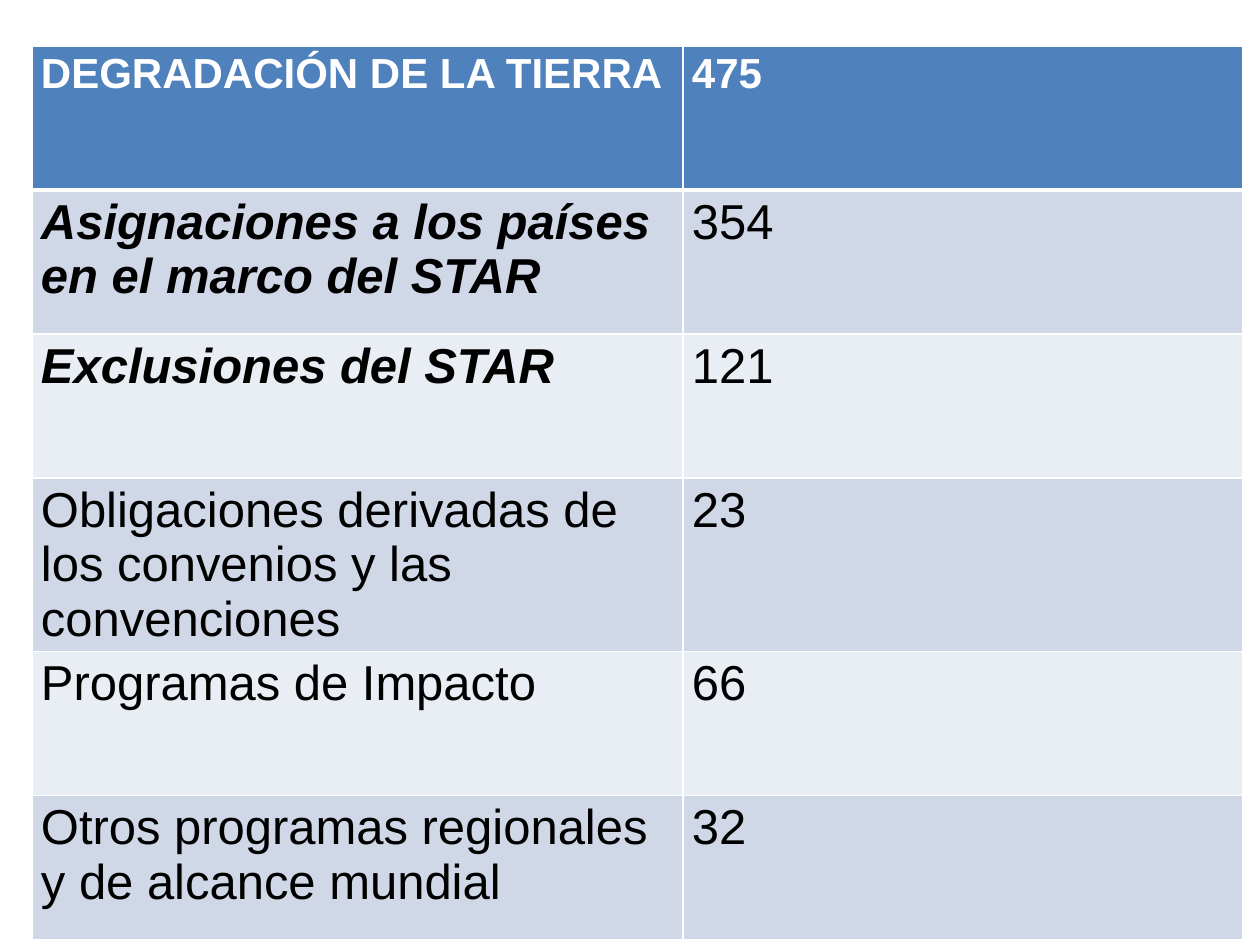
from pptx import Presentation
from pptx.dml.color import RGBColor as Rgb
from pptx.oxml import parse_xml as to_xml
from pptx.oxml.ns import nsdecls
from pptx.util import Pt

PX = 914400 // 126
HUES = {"white": "FFFFFF", "black": "000000", "head": "4F81BD",
        "dark": "D0D8E8", "light": "E9EDF4"}
ROWS = [
    ("DEGRADACIÓN DE LA TIERRA", "475"),
    ("Asignaciones a los países en el marco del STAR", "354"),
    ("Exclusiones del STAR", "121"),
    ("Obligaciones derivadas de los convenios y las convenciones", "23"),
    ("Programas de Impacto", "66"),
    ("Otros programas regionales y de alcance mundial", "32"),
]
STAR_ROWS = (1, 2)


class Deck:
    font = "Arial"

    def __init__(self, wide, high):
        self.prs = Presentation()
        self.prs.slide_width, self.prs.slide_height = wide * PX, high * PX
        self.slide = self.prs.slides.add_slide(self.prs.slide_layouts[6])

    def edge(self, cell, side, width):
        cell._tc.get_or_add_tcPr().append(to_xml(
            f'<a:ln{side} {nsdecls("a")} w="{Pt(width)}"><a:solidFill>'
            f'<a:srgbClr val="{HUES["white"]}"/></a:solidFill></a:ln{side}>'))

    def cell(self, cell, text, size, hue, fill, bold, slant, top, base):
        cell.margin_left = cell.margin_right = 9 * PX
        cell.margin_top = cell.margin_bottom = 5 * PX
        # Borders come before the fill in the cell properties
        for side, width in (("L", 1), ("R", 1), ("T", top), ("B", base)):
            self.edge(cell, side, width)
        cell.fill.solid()
        cell.fill.fore_color.rgb = Rgb.from_string(HUES[fill])
        run = cell.text_frame.paragraphs[0].add_run()
        run.text = text
        font = run.font
        font.name, font.size = self.font, Pt(size)
        font.bold, font.italic = bold, slant
        font.color.rgb = Rgb.from_string(HUES[hue])

    def table(self, left, top, cols, high, rows):
        frame = self.slide.shapes.add_table(
            len(rows), len(cols), left * PX, top * PX,
            sum(cols) * PX, high * len(rows) * PX)
        grid = frame.table
        for col, width in zip(grid.columns, cols):
            col.width = width * PX
        for r, row in enumerate(rows):
            head = r == 0
            fill = "head" if head else "dark" if r % 2 else "light"
            for c, text in enumerate(row):
                star = r in STAR_ROWS and c == 0
                self.cell(grid.cell(r, c), text, 24 if head else 28,
                          "white" if head else "black", fill,
                          head or star, star,
                          3 if r == 1 else 1, 3 if head else 1)


def main():
    deck = Deck(1260, 945)
    # Funding by line: header, then banded rows
    deck.table(32, 46, (651, 560), 144, ROWS)
    deck.prs.save("out.pptx")


if __name__ == "__main__":
    main()
